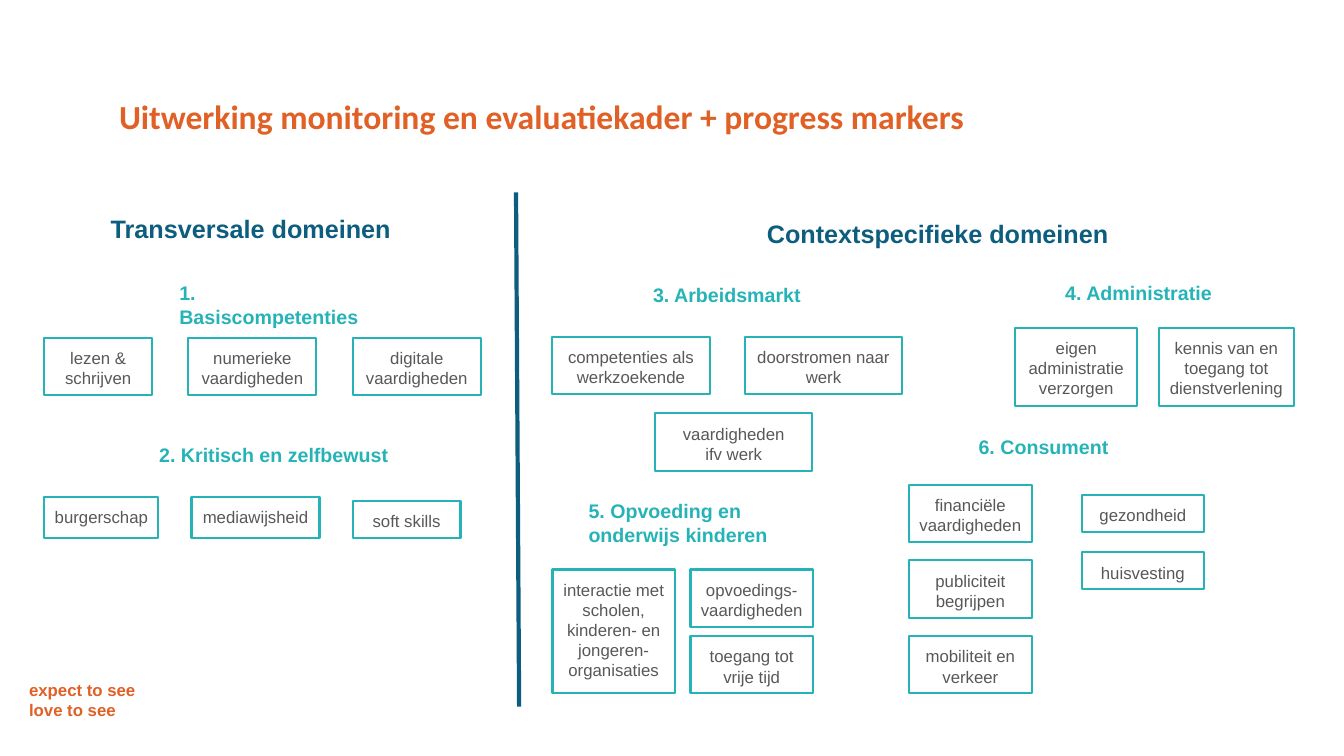
from dataclasses import dataclass

from lxml.etree import SubElement
from pptx import Presentation
from pptx.dml.color import RGBColor
from pptx.enum.shapes import MSO_CONNECTOR, MSO_SHAPE
from pptx.enum.text import MSO_ANCHOR, MSO_AUTO_SIZE, PP_ALIGN
from pptx.oxml.ns import qn
from pptx.util import Pt

TITLE = ("Uitwerking monitoring en evaluatiekader + progress markers", 77.8, 61.2, 759, 41)

DOMAINS = [
    ("Transversale domeinen", 72, 145.4, 221, 29.5),
    ("Contextspecifieke domeinen", 540.7, 149, 260, 29.5),
]

THEMES = [
    ("1. Basiscompetenties", 121, 193.7, 157, 29.5),
    ("2. Kritisch en zelfbewust", 106.6, 308.9, 187, 29.5),
    ("3. Arbeidsmarkt", 459.4, 195.1, 121, 29.5),
    ("4. Administratie", 753.8, 193.7, 121, 29.5),
    ("5. Opvoeding en\nonderwijs kinderen", 413.3, 349.2, 145.5, 45.4),
    ("6. Consument", 691.9, 303.1, 109, 29.5),
]

LEGEND = ("expect to see\nlove to see", 13.7, 478.1, 112.3, 45.4)
DIVIDER = (368.6, 137.5, 370.8, 504.7)

# Each stack: left, top, width, height, step right, step down, labels
STACKS = [
    (31.7, 241.2, 77, 41, 0, 0, ["lezen & schrijven"]),
    (134.6, 241.2, 91.5, 41, 117.4, 0, ["numerieke vaardigheden", "digitale vaardigheden"]),
    (31.7, 355, 81.5, 29.5, 0, 0, ["burgerschap"]),
    (136.8, 355, 91.5, 29.5, 0, 0, ["mediawijsheid"]),
    (252, 357.8, 77, 26.6, 0, 0, ["soft skills"]),
    (394.6, 240.5, 112.3, 41, 137.5, 0, ["competenties als werkzoekende", "doorstromen naar werk"]),
    (468, 295.2, 112.3, 41, 0, 0, ["vaardigheden\nifv werk"]),
    (725, 234, 87.5, 56.2, 0, 0, ["eigen administratie verzorgen"]),
    (828, 234, 96, 56.2, 0, 0, ["kennis van en toegang tot dienstverlening"]),
    (394.6, 406.8, 87.5, 88.5, 0, 0,
     ["interactie met scholen, kinderen- en jongeren-\norganisaties"]),
    (493.2, 406.8, 87.5, 41, 0, 47.5, ["opvoedings-\nvaardigheden", "toegang tot vrije tijd"]),
    (649.4, 346.3, 87.5, 41, 0, 54,
     ["financiële vaardigheden", "publiciteit begrijpen", "mobiliteit en verkeer"]),
    (772.6, 353.5, 87.5, 26.6, 0, 41, ["gezondheid", "huisvesting"]),
]


@dataclass(frozen=True)
class Theme:
    """Colours, type styles and line widths of the slide."""
    navy = RGBColor.from_string("0D5D7E")
    teal = RGBColor.from_string("26B3B8")
    orange = RGBColor.from_string("E06025")
    grey = RGBColor.from_string("57585A")
    title = {"name": "Calibri", "size": Pt(24), "bold": True}, orange
    domain = {"name": "Arial", "size": Pt(18), "bold": True}, navy
    heading = {"name": "Arial", "size": Pt(14), "bold": True}, teal
    legend = {"name": "Arial", "size": Pt(12), "bold": True}, orange
    label = {"name": "Arial", "size": Pt(12), "bold": False}, grey
    box_line = Pt(1.5)
    divider_line = Pt(3)


THEME = Theme()
FRAME = {
    "word_wrap": True,
    "auto_size": MSO_AUTO_SIZE.NONE,
    "vertical_anchor": MSO_ANCHOR.TOP,
    **{f"margin_{side}": Pt(7.2) for side in ("left", "top", "right", "bottom")},
}


def apply(target, values):
    for name, value in values.items():
        setattr(target, name, value)


def write(shape, text, style, alignment=PP_ALIGN.LEFT):
    frame = shape.text_frame
    apply(frame, FRAME)
    font, colour = style
    frame.text = text
    for para in frame.paragraphs:
        apply(para, {"alignment": alignment, "space_before": Pt(0)})
        for span in para.runs:
            apply(span.font, font)
            span.font.color.rgb = colour


def add_text(page, entry, style):
    text, *place = entry
    write(page.shapes.add_textbox(*map(Pt, place)), text, style)


def add_stack(page, left, top, width, height, right, down, labels):
    for index, label in enumerate(labels):
        place = left + index * right, top + index * down, width, height
        box = page.shapes.add_shape(MSO_SHAPE.RECTANGLE, *map(Pt, place))
        box.shadow.inherit = False
        box.fill.background()
        box.line.color.rgb = THEME.teal
        box.line.width = THEME.box_line
        write(box, label, THEME.label, PP_ALIGN.CENTER)


def add_divider(page):
    divider = page.shapes.add_connector(MSO_CONNECTOR.STRAIGHT, *map(Pt, DIVIDER))
    divider.line.color.rgb = THEME.navy
    divider.line.width = THEME.divider_line
    SubElement(divider._element.spPr, qn("a:effectLst"))


def main():
    """Build the slide with the domains of the monitoring framework."""
    deck = Presentation()
    apply(deck, {"slide_width": Pt(960), "slide_height": Pt(540)})
    page = deck.slides.add_slide(deck.slide_layouts[5])
    text, *place = TITLE
    title = page.shapes.title
    apply(title, dict(zip(("left", "top", "width", "height"), map(Pt, place))))
    write(title, text, THEME.title)
    for entries, style in ((DOMAINS, THEME.domain), (THEMES, THEME.heading),
                           ([LEGEND], THEME.legend)):
        for entry in entries:
            add_text(page, entry, style)
    add_divider(page)
    for stack in STACKS:
        add_stack(page, *stack)
    deck.save("out.pptx")


if __name__ == "__main__":
    main()
